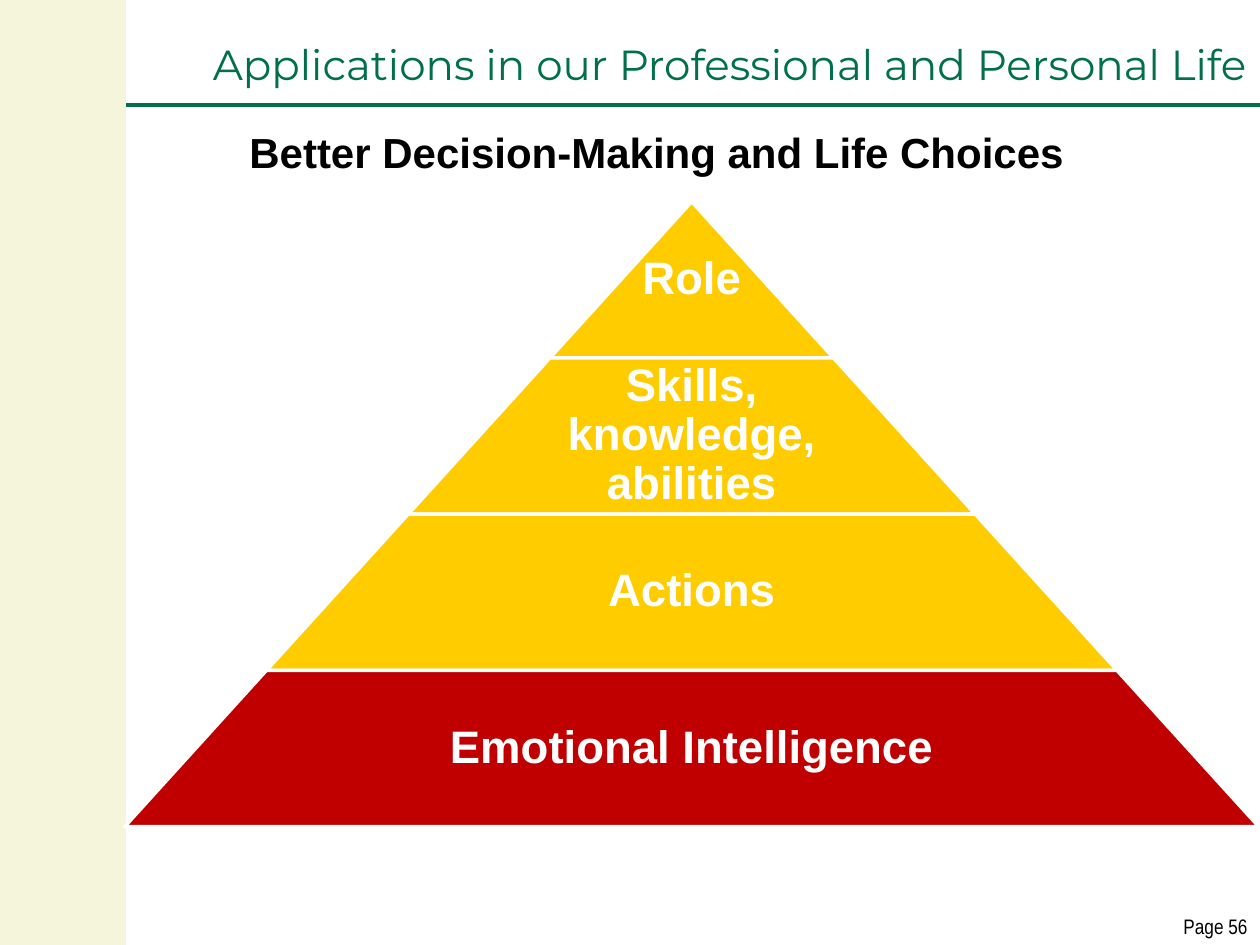
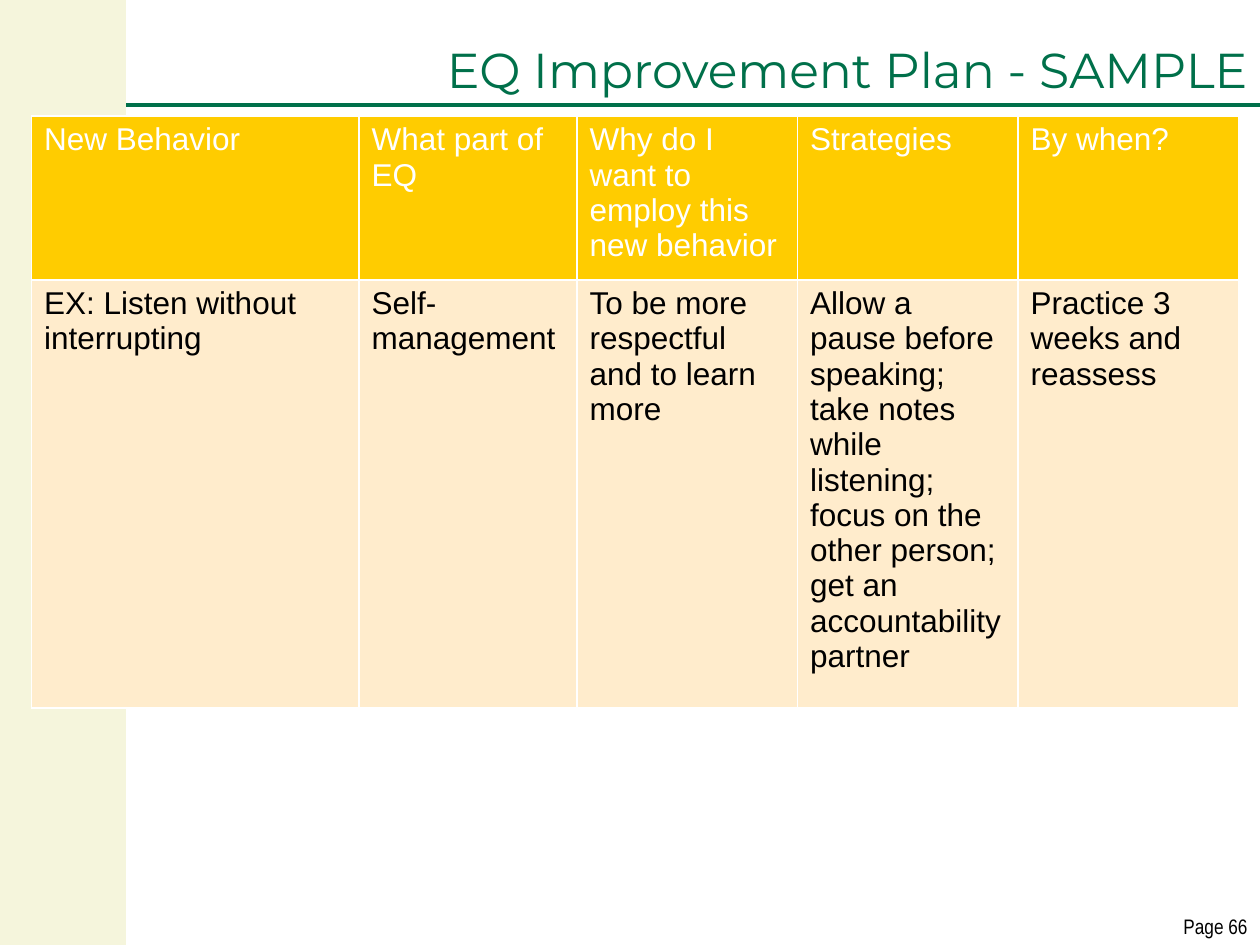
from lxml import etree
from pptx import Presentation
from pptx import util as u
from pptx.dml.color import RGBColor
from pptx.enum import shapes, text
from pptx.oxml import ns

Pt = u.Pt
COLORS = {"green": "00704A", "beige": "F5F5DC", "gold": "FFCC00", "red": "C00000",
          "cream": "FFECCC", "white": "FFFFFF", "black": "000000"}
SLIDE_WIDTH, SLIDE_HEIGHT = 720, 540
BAND_WIDTH, RULE_TOP = 72, 60

HEADING = "Better Decision-Making and Life Choices"
TIERS = [("Role", "gold"), ("Skills, knowledge, abilities", "gold"),
         ("Actions", "gold"), ("Emotional Intelligence", "red")]
PYRAMID_CENTER, PYRAMID_TOP = 395.28, 115.2
TIER_HEIGHT, TIER_STEP = 89.28, 162  # each tier is one step wider than the one above

PLAN = [
    ["New Behavior", "What part of EQ", "Why do I want to employ this new behavior",
     "Strategies", "By when?"],
    ["EX: Listen without interrupting", "Self-management",
     "To be more respectful and to learn more",
     "Allow a pause before speaking; take notes while listening; "
     "focus on the other person; get an accountability partner",
     "Practice 3 weeks and reassess"],
]
PLAN_COLUMNS = [187.2, 124.56, 126, 126, 126]
PLAN_ROWS = [87.5, 228.5]
ROW_STYLES = [("gold", "white"), ("cream", "black")]


def color(name):
    return RGBColor.from_string(COLORS[name])


def box(left, top, width, height):
    return Pt(left), Pt(top), Pt(width), Pt(height)


def style(paragraph, size, color_name, name="Arial", bold=False, align=text.PP_ALIGN.LEFT):
    paragraph.alignment = align
    font = paragraph.font
    font.size, font.name, font.bold = Pt(size), name, bold
    font.color.rgb = color(color_name)


def add_filled(slide, kind, place, fill, line=None):
    shape = slide.shapes.add_shape(kind, *place)
    shape.shadow.inherit = False
    shape.fill.solid()
    shape.fill.fore_color.rgb = color(fill)
    if line:
        shape.line.color.rgb = color(line)
        shape.line.width = Pt(2)
    else:
        shape.line.fill.background()
    return shape


def add_text(slide, place, words, wrap=True, **look):
    shape = slide.shapes.add_textbox(*place)
    frame = shape.text_frame
    frame.word_wrap = wrap
    frame.text = words
    style(frame.paragraphs[0], **look)
    return frame


def add_page(presentation, title, title_place, title_size, page):
    """Add a slide with the shared rule, side band, page number and title."""
    slide = presentation.slides.add_slide(presentation.slide_layouts[5])
    rule = slide.shapes.add_connector(shapes.MSO_CONNECTOR.STRAIGHT, Pt(0), Pt(RULE_TOP),
                                      Pt(SLIDE_WIDTH), Pt(RULE_TOP))
    rule.line.color.rgb = color("green")
    rule.line.width = Pt(2.25)
    etree.SubElement(rule._element.spPr, ns.qn("a:effectLst"))
    add_text(slide, box(667.5, 518.4, 52.5, 21.6), f"Page {page}", wrap=False, size=12,
             color_name="black", name="Arial Narrow", align=text.PP_ALIGN.RIGHT)
    add_filled(slide, shapes.MSO_SHAPE.RECTANGLE, box(0, 0, BAND_WIDTH, SLIDE_HEIGHT), "beige")

    holder = slide.shapes.title
    holder.left, holder.top, holder.width, holder.height = box(*title_place)
    frame = holder.text_frame
    frame.text = title
    frame.auto_size = text.MSO_AUTO_SIZE.NONE
    frame.vertical_anchor = text.MSO_ANCHOR.BOTTOM
    paragraph = frame.paragraphs[0]
    paragraph.line_spacing = 0.9
    style(paragraph, title_size, "green", "Montserrat", align=text.PP_ALIGN.RIGHT)
    return slide


def add_pyramid(slide):
    for index, (label, fill) in enumerate(TIERS):
        width = TIER_STEP * (index + 1)
        top = PYRAMID_TOP + TIER_HEIGHT * index
        tier = add_filled(slide, shapes.MSO_SHAPE.TRAPEZOID,
                          box(PYRAMID_CENTER - width / 2, top, width, TIER_HEIGHT),
                          fill, "white")
        tier.adjustments[0] = TIER_STEP / 2 / TIER_HEIGHT
        label_width = width if index == 0 else width * 0.65
        frame = add_text(slide, box(PYRAMID_CENTER - label_width / 2, top,
                                    label_width, TIER_HEIGHT),
                         label, size=26, color_name="white", bold=True,
                         align=text.PP_ALIGN.CENTER)
        frame.vertical_anchor = text.MSO_ANCHOR.MIDDLE
        frame.margin_left = frame.margin_right = Pt(2.6)
        frame.margin_top = frame.margin_bottom = Pt(2.6)
        frame.paragraphs[0].line_spacing = 0.9


def add_borders(cell):
    properties = cell._tc.get_or_add_tcPr()
    for side in ("lnL", "lnR", "lnT", "lnB"):
        line = etree.SubElement(properties, ns.qn(f"a:{side}"), w=str(Pt(1)))
        fill = etree.SubElement(line, ns.qn("a:solidFill"))
        etree.SubElement(fill, ns.qn("a:srgbClr"), val=COLORS["white"])


def add_plan(slide):
    place = box(18, 66.24, sum(PLAN_COLUMNS), sum(PLAN_ROWS))
    table = slide.shapes.add_table(len(PLAN), len(PLAN_COLUMNS), *place).table
    for column, width in zip(table.columns, PLAN_COLUMNS):
        column.width = Pt(width)
    for row, height, words, (fill, ink) in zip(table.rows, PLAN_ROWS, PLAN, ROW_STYLES):
        row.height = Pt(height)
        for cell, entry in zip(row.cells, words):
            add_borders(cell)
            cell.fill.solid()
            cell.fill.fore_color.rgb = color(fill)
            cell.text = entry
            style(cell.text_frame.paragraphs[0], 18, ink)


def main():
    presentation = Presentation()
    presentation.slide_width, presentation.slide_height = Pt(SLIDE_WIDTH), Pt(SLIDE_HEIGHT)

    slide = add_page(presentation, "Applications in our Professional and Personal Life",
                     (12, -4.3, 707.3, 59), 24, 56)
    add_pyramid(slide)
    add_text(slide, box(135.4, 69, 484.6, 36), HEADING, wrap=False, size=24,
             color_name="black", bold=True)

    slide = add_page(presentation, "EQ Improvement Plan - SAMPLE",
                     (BAND_WIDTH, -30, SLIDE_WIDTH - BAND_WIDTH, 90), 28, 66)
    add_plan(slide)
    presentation.save("out.pptx")


if __name__ == "__main__":
    main()
